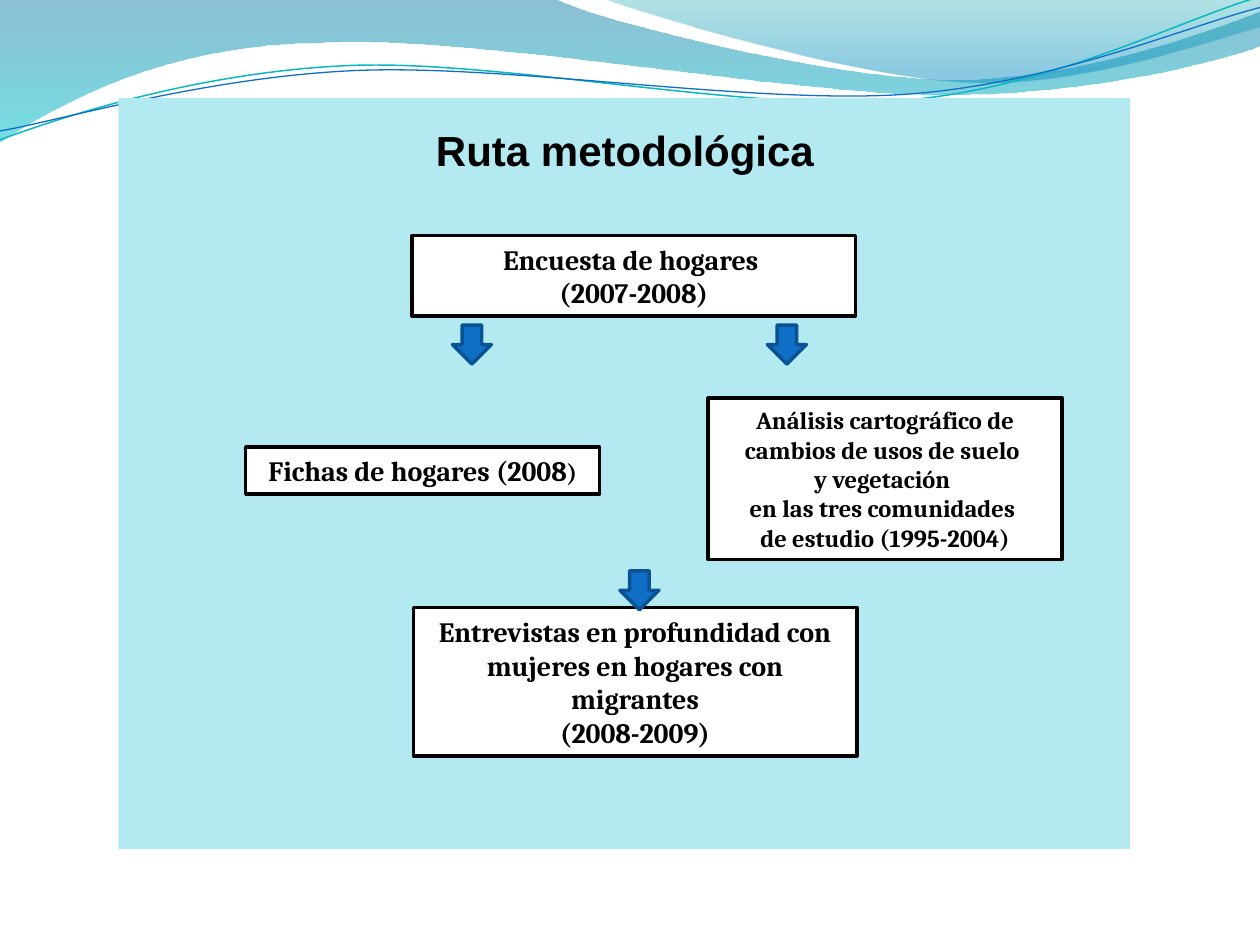
import math

from lxml import etree
from pptx import Presentation
from pptx.dml.color import RGBColor
from pptx.enum import shapes, text
from pptx.oxml.ns import qn
from pptx.util import Inches, Pt

COLORS = {
    "white": "FFFFFF", "black": "000000", "panel": "B3EAF2",
    "arrow": "0F6FC6", "arrow_edge": "0B5292", "teal_line": "0AB8BF",
    "deep_blue": "0074A1", "cyan": "00C6CF", "teal": "00A1A9", "blue": "008BBF",
}
TILT = 2.7


def rgb(name):
    return RGBColor.from_string(COLORS[name])


def turn(point, center):
    """Turn a point clockwise by TILT degrees about the center."""
    angle = math.radians(TILT)
    x, y = point[0] - center[0], point[1] - center[1]
    return (center[0] + x * math.cos(angle) - y * math.sin(angle),
            center[1] + x * math.sin(angle) + y * math.cos(angle))


class FlowSlide:
    def __init__(self, page):
        self.page = page
        self.heading_style = {"name": "Arial", "size": Pt(24), "bold": True}
        self.box_style = {"name": "Cambria", "bold": True}

    def style_span(self, span, style):
        for attribute, value in style.items():
            setattr(span.font, attribute, value)
        span.font.color.rgb = rgb("black")

    def paint(self, shape, fill=None, line=None, width=2):
        shape.shadow.inherit = False
        if fill:
            shape.fill.solid()
            shape.fill.fore_color.rgb = rgb(fill)
        else:
            shape.fill.background()
        if line:
            shape.line.color.rgb = rgb(line)
            shape.line.width = Pt(width)
        else:
            shape.line.fill.background()

    def outline(self, start, segments, close):
        """Draw segments of one point (line) or three points (cubic curve)."""
        points = [(Inches(x), Inches(y)) for x, y in [start, *sum(segments, [])]]
        builder = self.page.shapes.build_freeform(*points[0])
        builder.add_line_segments(points[1:], close=close)
        shape = builder.convert_to_shape()
        steps = iter(list(shape.element.spPr.iter(qn("a:lnTo"))))
        for segment in segments:
            first, *others = [next(steps) for _ in segment]
            if others:
                first.tag = qn("a:cubicBezTo")
                for step in others:
                    first.append(step[0])
                    step.getparent().remove(step)
        return shape

    def wave(self, start, segments, stops):
        """Draw a closed area; stops are (position, color, opacity percent)."""
        shape = self.outline(start, segments, True)
        self.paint(shape)
        shape.fill.gradient()
        shape.fill.gradient_angle = 270
        for stop, (position, color, _) in zip(shape.fill.gradient_stops, stops):
            stop.position = position
            stop.color.rgb = rgb(color)
        colors = shape.element.spPr.find(qn("a:gradFill")).iter(qn("a:srgbClr"))
        for color, (_, _, opacity) in zip(colors, stops):
            etree.SubElement(color, qn("a:alpha")).set("val", str(opacity * 1000))

    def strand(self, start, segments, center, color, width):
        """Draw an open curve, level at first and then tilted into place."""
        level = [[turn(point, center) for point in segment] for segment in segments]
        shape = self.outline(turn(start, center), level, False)
        shape.rotation = 360 - TILT
        self.paint(shape, line=color, width=width)

    def shape(self, kind, place, fill, line=None):
        shape = self.page.shapes.add_shape(kind, *map(Inches, place))
        self.paint(shape, fill, line)
        return shape

    def panel(self, *place):
        return self.shape(shapes.MSO_SHAPE.RECTANGLE, place, "panel")

    def title(self, wording, place, behind):
        """Place the title just in front of the shape behind it."""
        title = self.page.shapes.title
        for side, value in zip(("left", "top", "width", "height"), place):
            setattr(title, side, Inches(value))
        frame = title.text_frame
        frame.text = wording
        frame.auto_size = text.MSO_AUTO_SIZE.NONE
        frame.vertical_anchor = text.MSO_ANCHOR.TOP
        para = frame.paragraphs[0]
        para.alignment = text.PP_ALIGN.CENTER
        self.style_span(para.runs[0], self.heading_style)
        behind.element.addnext(title.element)

    def box(self, place, paragraphs, size=16):
        """Draw a framed step; each paragraph is a list of (wording, size or None)."""
        box = self.shape(shapes.MSO_SHAPE.RECTANGLE, place, "white", "black")
        frame = box.text_frame
        frame.word_wrap = True
        frame.vertical_anchor = text.MSO_ANCHOR.MIDDLE
        for index, spans in enumerate(paragraphs):
            para = frame.add_paragraph() if index else frame.paragraphs[0]
            para.alignment = text.PP_ALIGN.CENTER
            for wording, own_size in spans:
                span = para.add_run()
                span.text = wording
                self.style_span(span, {**self.box_style, "size": Pt(own_size or size)})

    def arrow(self, left, top, side=0.31):
        self.shape(shapes.MSO_SHAPE.DOWN_ARROW, (left, top, side, side),
                   "arrow", "arrow_edge")


def plain(*lines):
    return [[(line, None)] for line in lines]


def main():
    deck = Presentation()
    deck.slide_width, deck.slide_height = Inches(10), Inches(7.5)
    slide = FlowSlide(deck.slides.add_slide(deck.slide_layouts[5]))

    slide.wave((0, -0.01), [
        [(4.4, -0.01)],
        [(4.76, 0.17), (6.64, 0.63), (7.58, 0.63)],
        [(8.53, 0.63), (9.58, 0.26), (10, 0.09)],
        [(10.01, 0.36)],
        [(9.83, 0.44), (8.7, 0.76), (7.46, 0.75)],
        [(6.22, 0.75), (3.82, 0.28), (2.57, 0.34)],
        [(1.29, 0.35), (0.46, 0.83), (-0.01, 1.13)],
    ], [(0, "deep_blue", 45), (1, "cyan", 55)])
    slide.wave((4.79, -0.01), [
        [(5.09, 0.11), (6.82, 0.62), (7.69, 0.65)],
        [(8.56, 0.69), (9.61, 0.32), (10, 0.21)],
        [(10, 0)],
    ], [(0, "teal", 30), (0.8, "blue", 45)])
    slide.strand((0, 1.11), [
        [(0.48, 0.93), (1.58, 0.57), (2.77, 0.52)],
        [(3.95, 0.47), (5.93, 0.89), (7.13, 0.8)],
        [(8.33, 0.71), (9.38, 0.15), (9.98, -0.02)],
    ], (4.99, 0.58), "teal_line", 0.85)
    slide.strand((0, 1.04), [
        [(0.47, 0.96), (1.64, 0.61), (2.83, 0.56)],
        [(4.03, 0.51), (5.97, 0.83), (7.17, 0.75)],
        [(8.36, 0.67), (9.41, 0.21), (10, 0.06)],
    ], (5, 0.59), "arrow", 0.75)

    panel = slide.panel(0.94, 0.78, 8.03, 5.96)
    slide.title("Ruta metodológica", (2.89, 0.94, 4.14, 0.51), panel)

    slide.box((3.27, 1.87, 3.52, 0.64), plain("Encuesta de hogares ", "(2007-2008)"))
    slide.box((1.95, 3.55, 2.81, 0.37),
              [[("Fichas de hogares (2008", None), (")", 14)]])
    slide.box((5.62, 3.16, 2.81, 1.28), plain(
        "Análisis cartográfico de cambios de usos de suelo ", "y vegetación ",
        "en las tres comunidades ", "de estudio (1995-2004)"), size=14)
    slide.box((3.28, 4.82, 3.52, 1.18), plain(
        "Entrevistas en profundidad con mujeres en hogares con migrantes",
        "(2008-2009)"))

    for left, top in ((4.92, 4.53), (3.59, 2.58), (6.09, 2.58)):
        slide.arrow(left, top)

    deck.save("out.pptx")


if __name__ == "__main__":
    main()
